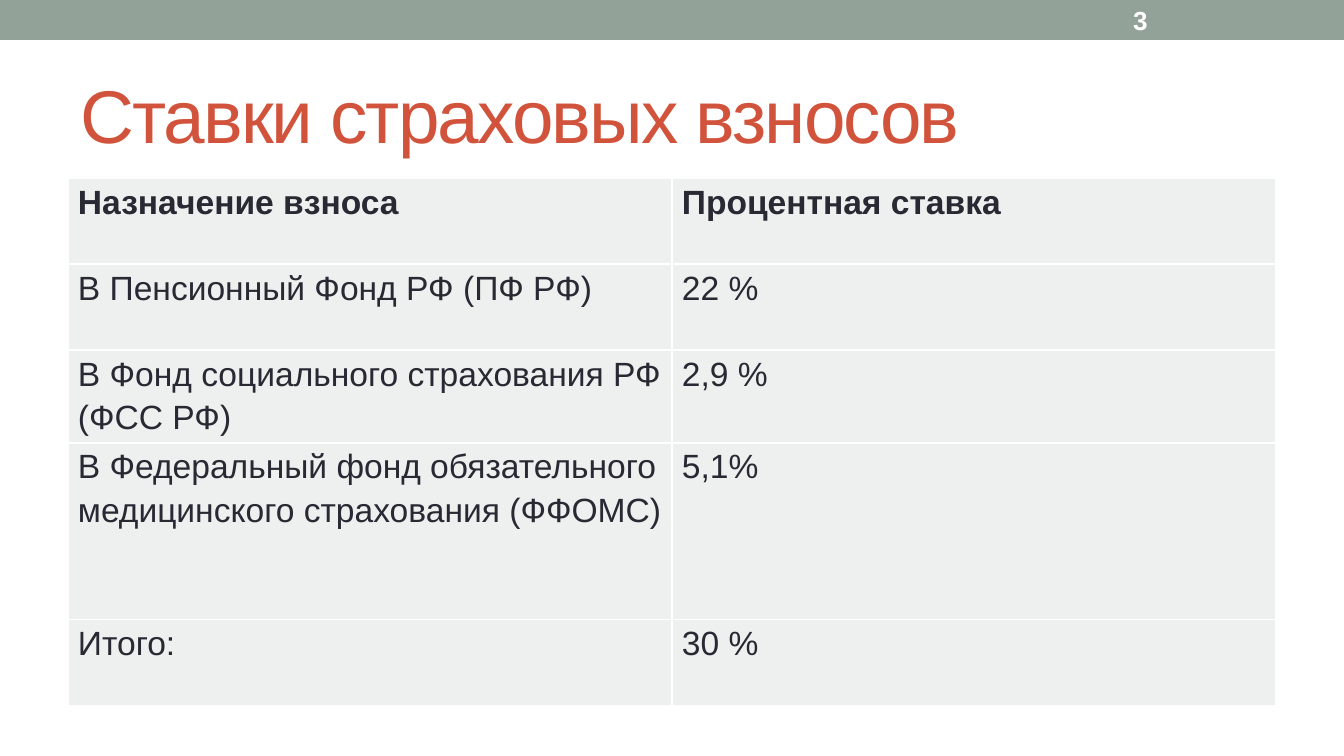
from dataclasses import dataclass

from lxml.etree import SubElement
from pptx import Presentation
from pptx.dml.color import RGBColor
from pptx.enum.shapes import MSO_SHAPE
from pptx.enum.text import MSO_ANCHOR
from pptx.oxml.ns import qn
from pptx.util import Emu, Pt

WIDTH, HEIGHT = 1344, 756
EMU_PER_PX = 9144000 / WIDTH
FONT = "Arial"
SAGE = RGBColor(0x93, 0xA2, 0x99)
RED = RGBColor(0xD2, 0x53, 0x3C)
DARK = RGBColor(0x29, 0x29, 0x34)
PALE = RGBColor(0xEE, 0xF0, 0xEF)
WHITE = RGBColor(0xFF, 0xFF, 0xFF)


@dataclass
class Label:
    text: str
    left: int
    top: int
    width: int
    height: int
    size: int
    color: RGBColor
    bold: bool = False
    spacing: int = 0


@dataclass
class Rate:
    purpose: str
    percent: str
    height: int = 86
    space_after: tuple[int, int] = (10, 10)
    bold: bool = False


LABELS = [
    Label("Ставки страховых взносов", 67, 59, 1210, 109, 40, RED, spacing=-100),
    Label("3", 1120, 2, 157, 36, 14, WHITE, bold=True),
]
RATES = [
    Rate("Назначение взноса", "Процентная ставка", bold=True),
    Rate("В Пенсионный Фонд РФ (ПФ РФ)", "22 %", space_after=(0, 0)),
    Rate("В Фонд социального страхования РФ (ФСС РФ)", "2,9 %"),
    Rate("В Федеральный фонд обязательного медицинского страхования (ФФОМС)",
         "5,1%", height=177),
    Rate("Итого:", "30 %", space_after=(10, 0)),
]


def px(n: int) -> Emu:
    return Emu(round(n * EMU_PER_PX))


def format_run(r, size: int, color: RGBColor, bold: bool) -> None:
    r.font.name = FONT
    r.font.size = Pt(size)
    r.font.color.rgb = color
    r.font.bold = bold


def add_bar(s) -> None:
    sp = s.shapes.add_shape(MSO_SHAPE.RECTANGLE, 0, 0, px(WIDTH), px(40))
    sp.shadow.inherit = False
    sp.fill.solid()
    sp.fill.fore_color.rgb = SAGE
    sp.line.fill.background()


def add_label(s, label: Label) -> None:
    sp = s.shapes.add_textbox(px(label.left), px(label.top),
                              px(label.width), px(label.height))
    tf = sp.text_frame
    tf.word_wrap = True
    tf.vertical_anchor = MSO_ANCHOR.MIDDLE
    tf.text = label.text
    r = tf.paragraphs[0].runs[0]
    format_run(r, label.size, label.color, label.bold)
    if label.spacing:
        r.font._element.set("spc", str(label.spacing))


def add_borders(cell) -> None:
    tc_pr = cell._tc.get_or_add_tcPr()
    for i, side in enumerate(("lnL", "lnR", "lnT", "lnB")):
        ln = tc_pr.makeelement(qn(f"a:{side}"), {"w": str(Pt(1))})
        fill = SubElement(ln, qn("a:solidFill"))
        SubElement(fill, qn("a:srgbClr"), val=str(WHITE))
        tc_pr.insert(i, ln)


def fill_cell(cell, text: str, space_after: int, bold: bool) -> None:
    cell.margin_left = cell.margin_right = px(10)
    cell.margin_top = cell.margin_bottom = 0
    cell.fill.solid()
    cell.fill.fore_color.rgb = PALE
    add_borders(cell)
    cell.text = text
    p = cell.text_frame.paragraphs[0]
    p.line_spacing = 1.15
    p.space_after = Pt(space_after)
    format_run(p.runs[0], 18, DARK, bold)


def add_rates(s, rates: list[Rate]) -> None:
    height = sum(rate.height for rate in rates)
    table = s.shapes.add_table(len(rates), 2, px(68), px(178),
                               px(1208), px(height)).table
    table.first_row = table.horz_banding = False
    for row, rate in zip(table.rows, rates):
        row.height = px(rate.height)
        texts = (rate.purpose, rate.percent)
        for cell, text, after in zip(row.cells, texts, rate.space_after):
            fill_cell(cell, text, after, rate.bold)


def main() -> None:
    prs = Presentation()
    prs.slide_width, prs.slide_height = px(WIDTH), px(HEIGHT)
    s = prs.slides.add_slide(prs.slide_layouts[6])
    add_bar(s)
    title, number = LABELS
    add_label(s, title)
    add_rates(s, RATES)
    add_label(s, number)
    prs.save("out.pptx")


if __name__ == "__main__":
    main()
